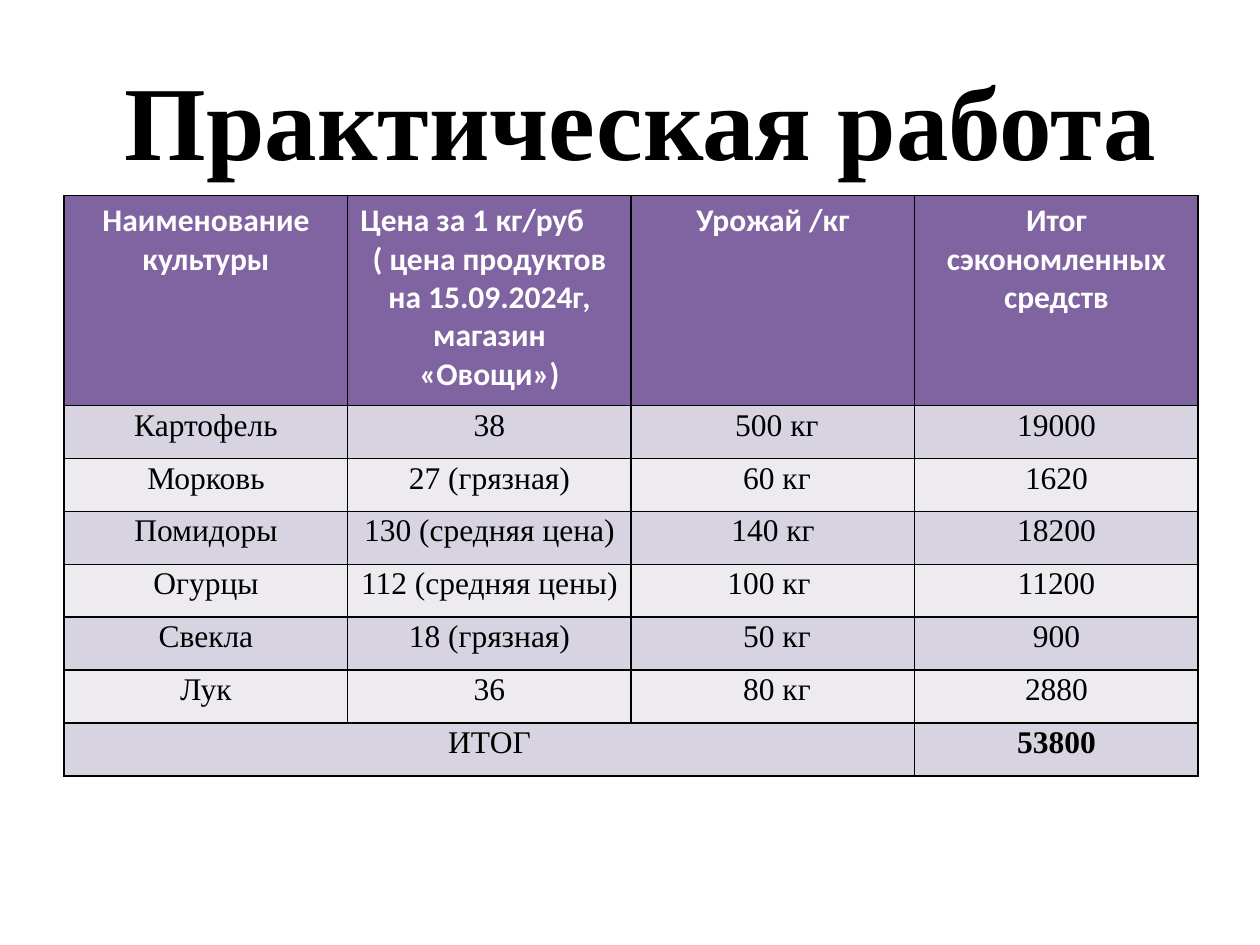
from lxml import etree
from pptx import Presentation
from pptx import util as u
from pptx.dml.color import RGBColor
from pptx.enum import text
from pptx.oxml import ns

TITLE = "Практическая работа"
HEADERS = [
    ["Наименование культуры"],
    ["Цена за 1 кг/руб", "( цена продуктов на 15.09.2024г, магазин «Овощи»)"],
    ["Урожай /кг"],
    ["Итог сэкономленных средств"],
]
CROPS = [
    ("Картофель", "38", " 500 кг", "19000"),
    ("Морковь", "27 (грязная)", " 60 кг", "1620"),
    ("Помидоры", "130 (средняя цена)", "140 кг", "18200"),
    ("Огурцы", "112 (средняя цены)", "100 кг ", "11200"),
    ("Свекла", "18 (грязная)", " 50 кг", "900"),
    ("Лук", "36", " 80 кг", "2880"),
]
TOTAL = ("ИТОГ", "", "", "53800")

HEADER_FILL = "8064A2"
BAND_FILLS = ["D8D3E0", "EDEAF0"]
COLUMN_WIDTH, HEADER_HEIGHT, ROW_HEIGHT = 2.25, 1.67, 0.42

TITLE_FONT = {"name": "Times New Roman", "size": 60, "bold": True, "color": "000000"}
HEADER_FONT = {"name": "Calibri", "size": 18, "bold": True, "color": "FFFFFF"}
BODY_FONT = {"name": "Times New Roman", "size": 18, "bold": False, "color": "000000"}
TOTAL_FONT = {**BODY_FONT, "bold": True}


def rgb(value):
    return RGBColor.from_string(value)


def write(para, words, font, align=text.PP_ALIGN.CENTER):
    para.alignment = align
    span = para.add_run()
    span.text = words
    formats = {**font, "size": u.Pt(font["size"])}
    span.font.color.rgb = rgb(formats.pop("color"))
    for name, value in formats.items():
        setattr(span.font, name, value)


def set_margins(target, left, top, right, bottom):
    margins = {"left": left, "top": top, "right": right, "bottom": bottom}
    for side, value in margins.items():
        setattr(target, f"margin_{side}", u.Inches(value))


def style_cell(cell, fill):
    """Draw thin black borders, then fill the cell."""
    properties = cell._tc.get_or_add_tcPr()
    for side in ("lnL", "lnR", "lnT", "lnB"):
        line = etree.SubElement(properties, ns.qn(f"a:{side}"), w=str(u.Pt(1)))
        solid = etree.SubElement(line, ns.qn("a:solidFill"))
        etree.SubElement(solid, ns.qn("a:srgbClr"), val="000000")
    cell.fill.solid()
    cell.fill.fore_color.rgb = rgb(fill)


def add_title(page):
    title = page.shapes.title
    title.left, title.top = u.Inches(0.83), u.Inches(0)
    title.width, title.height = u.Inches(8.51), u.Inches(2.56)
    frame = title.text_frame
    set_margins(frame, 0.1, 0.44, 0.1, 0)
    frame.vertical_anchor = text.MSO_ANCHOR.TOP
    frame.word_wrap = False
    write(frame.paragraphs[0], TITLE, TITLE_FONT)


def add_harvest_table(page):
    body = CROPS + [TOTAL]
    rows, columns = len(body) + 1, len(HEADERS)
    height = HEADER_HEIGHT + ROW_HEIGHT * len(body)
    table = page.shapes.add_table(
        rows, columns, u.Inches(0.51), u.Inches(1.55),
        u.Inches(COLUMN_WIDTH * columns), u.Inches(height)).table
    for column in table.columns:
        column.width = u.Inches(COLUMN_WIDTH)
    for index, row in enumerate(table.rows):
        row.height = u.Inches(ROW_HEIGHT if index else HEADER_HEIGHT)

    for column, lines in enumerate(HEADERS):
        cell = table.cell(0, column)
        style_cell(cell, HEADER_FILL)
        frame = cell.text_frame
        for index, words in enumerate(lines):
            para = frame.add_paragraph() if index else frame.paragraphs[0]
            starts_list = index == 0 and len(lines) > 1
            align = text.PP_ALIGN.LEFT if starts_list else text.PP_ALIGN.CENTER
            write(para, words, HEADER_FONT, align)

    for index, values in enumerate(body):
        for column, words in enumerate(values):
            cell = table.cell(index + 1, column)
            style_cell(cell, BAND_FILLS[index % 2])
            set_margins(cell, 0.07, 0, 0.07, 0)
            if words:
                para = cell.text_frame.paragraphs[0]
                para.line_spacing = 1.07
                is_sum = values is TOTAL and column == columns - 1
                write(para, words, TOTAL_FONT if is_sum else BODY_FONT)
    table.cell(rows - 1, 0).merge(table.cell(rows - 1, columns - 2))


def main():
    deck = Presentation()
    deck.slide_width, deck.slide_height = u.Inches(10), u.Inches(7.5)
    page = deck.slides.add_slide(deck.slide_layouts[5])
    add_title(page)
    add_harvest_table(page)
    deck.save("out.pptx")


if __name__ == "__main__":
    main()
